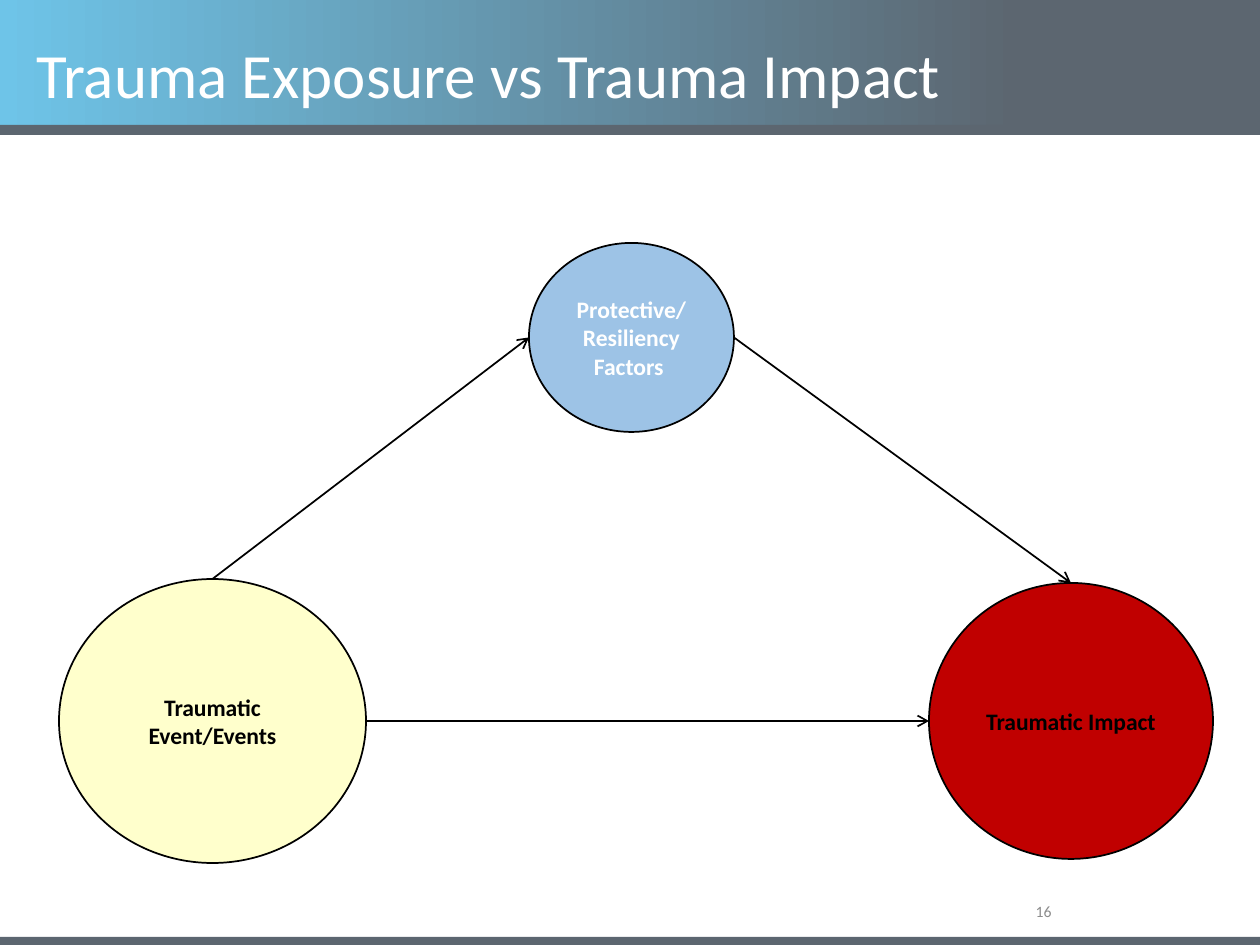
from pptx import Presentation
from pptx.dml.color import RGBColor
from pptx.enum.shapes import MSO_CONNECTOR, MSO_SHAPE
from pptx.enum.text import MSO_ANCHOR, PP_ALIGN
from pptx.oxml.ns import qn
from pptx.util import Pt
from lxml.etree import SubElement

PX = 914400 // 126  # EMU per px
WIDE, HIGH = 1260, 945
COLORS = {
    "slate": "5C6670", "sky": "6EC4E8", "gray": "8C8C8C",
    "black": "000000", "white": "FFFFFF",
    "cream": "FFFFCC", "blue": "9DC3E6", "red": "C00000",
}


def color(name):
    return RGBColor.from_string(COLORS[name])


def emu(*sizes):
    return [round(size * PX) for size in sizes]


def write(frame, text, size, ink, align=PP_ALIGN.LEFT, bold=False):
    frame.word_wrap = True
    para = frame.paragraphs[0]
    para.alignment = align
    run = para.add_run()
    run.text = text
    font = run.font
    font.name, font.size, font.bold = "Calibri", Pt(size), bold
    font.color.rgb = color(ink)


def add_text(slide, box, *style, anchor=MSO_ANCHOR.TOP, **more):
    frame = slide.shapes.add_textbox(*emu(*box)).text_frame
    frame.vertical_anchor = anchor
    write(frame, *style, **more)


def add_shape(slide, kind, box, fill):
    shape = slide.shapes.add_shape(kind, *emu(*box))
    shape.shadow.inherit = False
    shape.fill.solid()
    shape.fill.fore_color.rgb = color(fill)
    shape.line.fill.background()
    return shape


def add_header(slide, box, title):
    left, top, width, height = box
    rule = 10
    band = add_shape(slide, MSO_SHAPE.RECTANGLE,
                     (left, top, width, height - rule), "sky")
    # Fade from sky to slate
    band.fill.gradient()
    band.fill.gradient_angle = 0
    for stop, name, place in zip(band.fill.gradient_stops, ("sky", "slate"), (0, 0.81)):
        stop.color.rgb = color(name)
        stop.position = place
    add_shape(slide, MSO_SHAPE.RECTANGLE,
              (left, top + height - rule, width, rule), "slate")
    add_text(slide, (left + 24, top + 29, 1106, 89), title, 36, "white")


def add_footer(slide, box, number):
    left, top, width, height = box
    bar = 8
    add_shape(slide, MSO_SHAPE.RECTANGLE,
              (left, top + height - bar, width, bar), "slate")
    add_text(slide, (left + 890, top, 174, 29), number, 9, "gray",
             align=PP_ALIGN.RIGHT, anchor=MSO_ANCHOR.MIDDLE)


def add_node(slide, box, text, fill, ink):
    node = add_shape(slide, MSO_SHAPE.OVAL, box, fill)
    node.line.color.rgb = color("black")
    node.line.width = Pt(1)
    node.text_frame.vertical_anchor = MSO_ANCHOR.MIDDLE
    write(node.text_frame, text, 13.5, ink, PP_ALIGN.CENTER, True)


def add_arrow(slide, start, end):
    arrow = slide.shapes.add_connector(MSO_CONNECTOR.STRAIGHT, *emu(*start, *end))
    arrow.line.color.rgb = color("black")
    arrow.line.width = Pt(1)
    SubElement(arrow.line._get_or_add_ln(), qn("a:tailEnd"), type="arrow")
    SubElement(arrow._element.spPr, qn("a:effectLst"))


def add_diagram(slide, box):
    left, top, width, height = box
    # Node boxes within the diagram
    event = (left, top + 336, 307, 284)
    factor = (left + 470, top, 205, 189)
    impact = (left + width - 284, top + 340, 284, 276)

    def side(node, across, down):
        x, y, w, h = node
        return x + w * across, y + h * down

    # Arrows
    add_arrow(slide, side(factor, 1, 0.5), side(impact, 0.5, 0))
    add_arrow(slide, side(event, 0.5, 0), side(factor, 0, 0.5))
    start = side(event, 1, 0.5)
    add_arrow(slide, start, (impact[0], start[1]))

    # Nodes
    add_node(slide, event, "Traumatic Event/Events", "cream", "black")
    add_node(slide, factor, "Protective/Resiliency Factors ", "blue", "white")
    add_node(slide, impact, "Traumatic Impact", "red", "black")


def main():
    deck = Presentation()
    deck.slide_width, deck.slide_height = emu(WIDE, HIGH)
    slide = deck.slides.add_slide(deck.slide_layouts[6])
    add_header(slide, (0, 0, WIDE, 135), "Trauma Exposure vs Trauma Impact")
    add_diagram(slide, (59, 243, 1154, 620))
    add_footer(slide, (0, 897, WIDE, 48), "16")
    deck.save("out.pptx")


if __name__ == "__main__":
    main()
